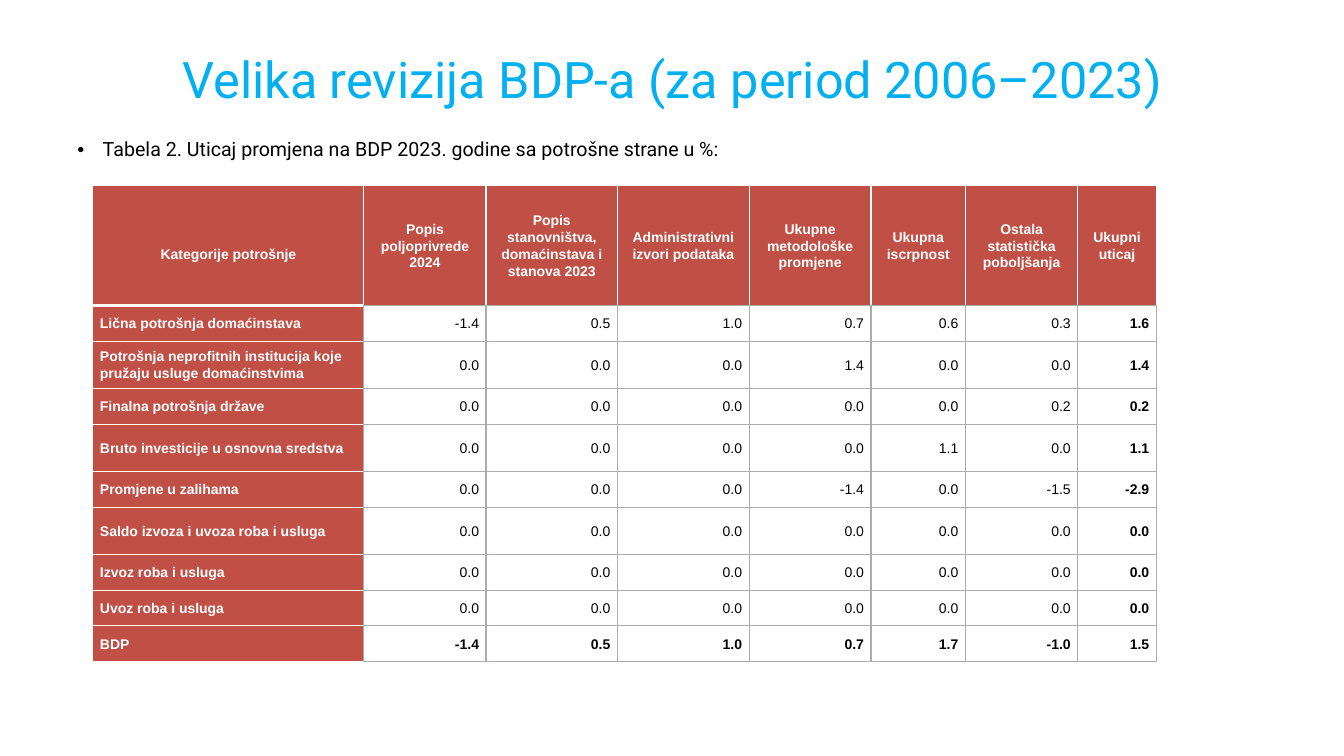
"""Build the slide on the consumption-side effects of the GDP revision."""
import dataclasses

import lxml.etree
import pptx
import pptx.dml.color
import pptx.enum.text
import pptx.oxml.ns
import pptx.slide
import pptx.table
import pptx.text.text
import pptx.util
from pptx.util import Cm, Pt

RGBColor = pptx.dml.color.RGBColor
Align = pptx.enum.text.PP_ALIGN
Anchor = pptx.enum.text.MSO_ANCHOR
SKY = RGBColor(0x00, 0xB0, 0xF0)
BRICK = RGBColor(0xC0, 0x50, 0x46)
GREY = RGBColor(0xAF, 0xAB, 0xAB)
WHITE = RGBColor(0xFF, 0xFF, 0xFF)
BLACK = RGBColor(0x00, 0x00, 0x00)

COLUMN_WIDTHS = (6.83, 3.08, 3.31, 3.32, 3.07, 2.38, 2.83, 1.98)
HEADER_HEIGHT, LOW, HIGH = 3.02, 0.9, 1.19
HEADERS = (
    "Kategorije potrošnje",
    "Popis poljoprivrede 2024",
    "Popis stanovništva, domaćinstava i stanova 2023",
    "Administrativni izvori podataka",
    "Ukupne metodološke promjene",
    "Ukupna iscrpnost",
    "Ostala statistička poboljšanja",
    "Ukupni uticaj",
)


@dataclasses.dataclass(frozen=True)
class Category:
    """One spending category with its effects in percent."""
    label: str
    effects: tuple[float, ...]
    height: float = LOW
    total: bool = False


@dataclasses.dataclass(frozen=True)
class CellStyle:
    """Look of one kind of table cell; borders give colour and points."""
    fill: RGBColor
    color: RGBColor
    align: Align
    bold: bool
    borders: dict[str, tuple[RGBColor, float]]


NO_EFFECT = (0.0,) * 7
CATEGORIES = (
    Category("Lična potrošnja domaćinstava", (-1.4, 0.5, 1.0, 0.7, 0.6, 0.3, 1.6)),
    Category("Potrošnja neprofitnih institucija koje pružaju usluge domaćinstvima",
             (0.0, 0.0, 0.0, 1.4, 0.0, 0.0, 1.4), HIGH),
    Category("Finalna potrošnja države", (0.0, 0.0, 0.0, 0.0, 0.0, 0.2, 0.2)),
    Category("Bruto investicije u osnovna sredstva",
             (0.0, 0.0, 0.0, 0.0, 1.1, 0.0, 1.1), HIGH),
    Category("Promjene u zalihama", (0.0, 0.0, 0.0, -1.4, 0.0, -1.5, -2.9)),
    Category("Saldo izvoza i uvoza roba i usluga", NO_EFFECT, HIGH),
    Category("Izvoz roba i usluga", NO_EFFECT),
    Category("Uvoz roba i usluga", NO_EFFECT),
    Category("BDP", (-1.4, 0.5, 1.0, 0.7, 1.7, -1.0, 1.5), total=True),
)

WHITE_EDGES = {side: (WHITE, 1) for side in "LRTB"}
GREY_EDGES = {side: (GREY, 1) for side in "LRTB"}
CORNER = CellStyle(BRICK, WHITE, Align.CENTER, True, WHITE_EDGES | {"B": (WHITE, 3)})
HEADER = CellStyle(BRICK, WHITE, Align.CENTER, True, WHITE_EDGES | {"B": (GREY, 1)})
LABEL = CellStyle(BRICK, WHITE, Align.LEFT, True, WHITE_EDGES | {"R": (GREY, 1)})
VALUE = CellStyle(WHITE, BLACK, Align.RIGHT, False, GREY_EDGES)
TOTAL = dataclasses.replace(VALUE, bold=True)


def format_text(para: pptx.text.text._Paragraph, font: str, size: float,
                color: RGBColor, bold: bool = False) -> None:
    """Format every run of a paragraph."""
    for span in para.runs:
        span.font.name = font
        span.font.size = Pt(size)
        span.font.bold = bold
        span.font.color.rgb = color


def fill_cell(cell: pptx.table._Cell, text: str, style: CellStyle) -> None:
    """Write the text of a cell and apply its style."""
    cell.vertical_anchor = Anchor.MIDDLE
    cell.margin_left = cell.margin_right = Cm(0.18)
    cell.margin_top = cell.margin_bottom = 0
    cell.text_frame.text = text
    para = cell.text_frame.paragraphs[0]
    para.alignment = style.align
    para.line_spacing = 1.07
    format_text(para, "Arial", 10, style.color, style.bold)
    properties = cell._tc.get_or_add_tcPr()
    qn = pptx.oxml.ns.qn
    for side, (color, points) in style.borders.items():
        line = lxml.etree.SubElement(properties, qn(f"a:ln{side}"), w=str(Pt(points)))
        solid = lxml.etree.SubElement(line, qn("a:solidFill"))
        lxml.etree.SubElement(solid, qn("a:srgbClr"), val=str(color))
    cell.fill.solid()
    cell.fill.fore_color.rgb = style.fill


def add_title(page: pptx.slide.Slide) -> None:
    """Add the centred slide title."""
    box = page.shapes.add_textbox(Cm(2.34), Cm(1.02), Cm(29.21), Cm(1.73))
    frame = box.text_frame
    frame.word_wrap = True
    frame.vertical_anchor = Anchor.BOTTOM
    frame.margin_left = frame.margin_right = frame.margin_top = frame.margin_bottom = 0
    frame.text = "Velika revizija BDP-a (za period 2006–2023)"
    para = frame.paragraphs[0]
    para.alignment = Align.CENTER
    para.line_spacing = 0.9
    format_text(para, "Roboto", 36, SKY)


def add_caption(page: pptx.slide.Slide) -> None:
    """Add the bulleted table caption."""
    box = page.shapes.add_textbox(Cm(1.7), Cm(3.4), Cm(30.81), Cm(14.96))
    box.text_frame.word_wrap = True
    box.text_frame.text = "Tabela 2. Uticaj promjena na BDP 2023. godine sa potrošne strane u %:"
    para = box.text_frame.paragraphs[0]
    para.line_spacing = 0.9
    properties = para._p.get_or_add_pPr()
    properties.set("marL", str(Cm(0.64)))
    properties.set("indent", str(-Cm(0.64)))
    qn = pptx.oxml.ns.qn
    lxml.etree.SubElement(properties, qn("a:buFont"), typeface="Arial")
    lxml.etree.SubElement(properties, qn("a:buChar"), char="•")
    format_text(para, "Roboto", 14, BLACK)


def add_effects_table(page: pptx.slide.Slide) -> None:
    """Add the table of effects by spending category."""
    heights = (HEADER_HEIGHT, *(category.height for category in CATEGORIES))
    table = page.shapes.add_table(
        len(heights), len(HEADERS), Cm(2.34), Cm(4.68),
        Cm(sum(COLUMN_WIDTHS)), Cm(sum(heights))).table
    table.first_row = table.horz_banding = False
    for column, width in zip(table.columns, COLUMN_WIDTHS):
        column.width = Cm(width)
    for row, height in zip(table.rows, heights):
        row.height = Cm(height)
    for column, header in enumerate(HEADERS):
        fill_cell(table.cell(0, column), header, HEADER if column else CORNER)
    table.cell(0, 0).margin_top = Cm(0.43)
    for row, category in enumerate(CATEGORIES, start=1):
        fill_cell(table.cell(row, 0), category.label, LABEL)
        for column, effect in enumerate(category.effects, start=1):
            bold = category.total or column == len(category.effects)
            fill_cell(table.cell(row, column), f"{effect:.1f}", TOTAL if bold else VALUE)


def main() -> None:
    """Create and save the deck."""
    deck = pptx.Presentation()
    deck.slide_width, deck.slide_height = Cm(33.87), Cm(19.05)
    page = deck.slides.add_slide(deck.slide_layouts[6])
    add_caption(page)
    add_title(page)
    add_effects_table(page)
    deck.save("out.pptx")


if __name__ == "__main__":
    main()
